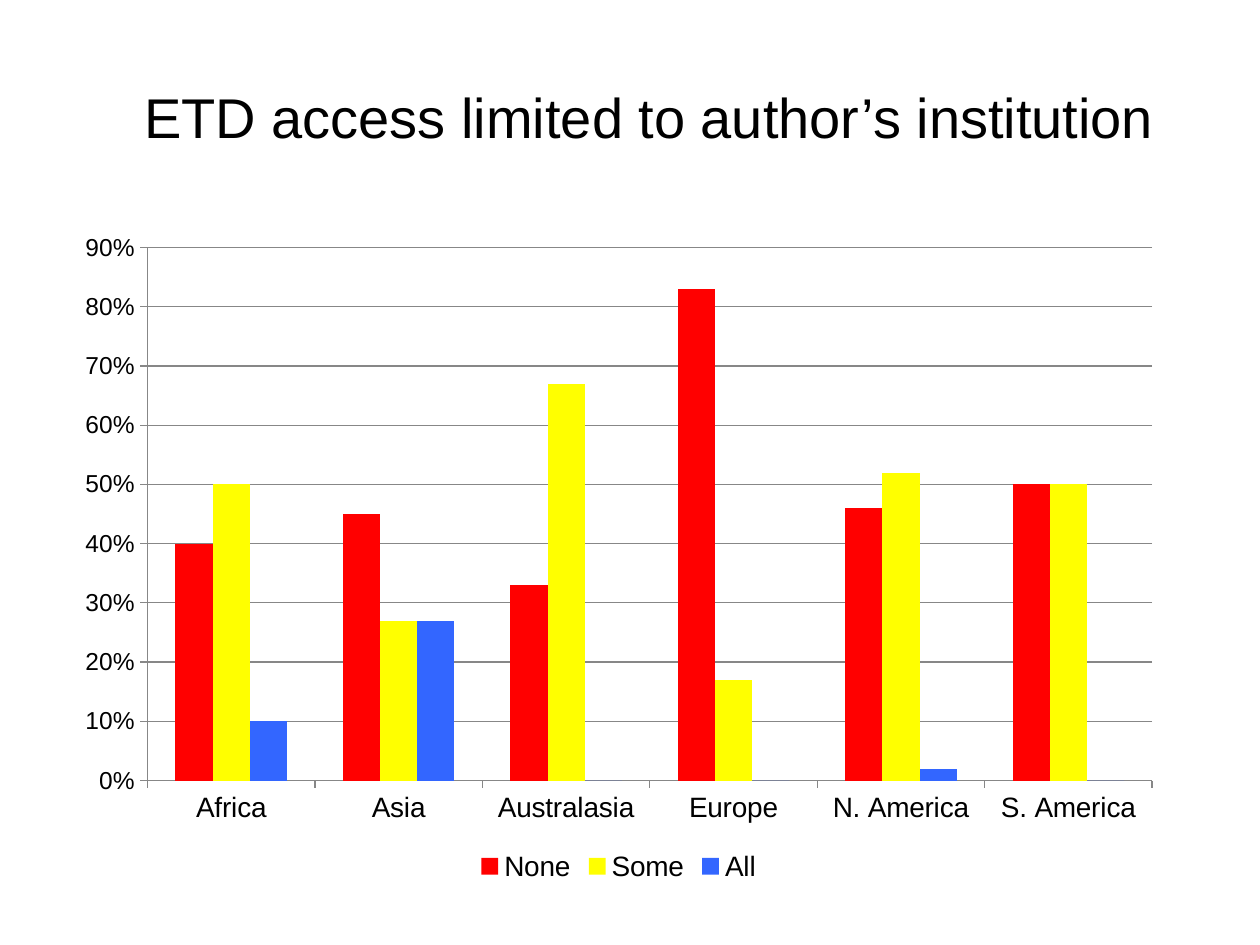
import dataclasses

import pptx
import pptx.chart.data
import pptx.dml.color
import pptx.enum.chart
import pptx.enum.text
import pptx.util
from pptx.util import Inches


@dataclasses.dataclass(frozen=True)
class Theme:
    """Hold the colours and type sizes of the slide."""
    font: str = "Arial"
    text: str = "000000"
    rule: str = "878787"
    answers: tuple = ("FF0000", "FFFF00", "3366FF")
    title_size: int = 32
    label_size: int = 16
    scale_size: int = 14


THEME = Theme()
REGIONS = ("Africa", "Asia", "Australasia", "Europe", "N. America", "S. America")
ACCESS_LIMITS = {
    "None": (0.4, 0.45, 0.33, 0.83, 0.46, 0.5),
    "Some": (0.5, 0.27, 0.67, 0.17, 0.52, 0.5),
    "All": (0.1, 0.27, 0, 0, 0.02, 0),
}


def rgb(value):
    """Turn a hex string into a colour."""
    return pptx.dml.color.RGBColor.from_string(value)


def style_font(font, size):
    """Apply the theme typeface and text colour at a size."""
    font.name = THEME.font
    font.size = pptx.util.Pt(size)
    font.bold = False
    font.color.rgb = rgb(THEME.text)


def style_line(line):
    """Draw an axis or grid line in the theme rule colour."""
    line.color.rgb = rgb(THEME.rule)
    line.width = pptx.util.Pt(0.75)


def add_title(slide, wording):
    """Add the centred slide title."""
    title = slide.shapes.add_textbox(
        Inches(0.5), Inches(0.3), Inches(9.31), Inches(1.25))
    frame = title.text_frame
    frame.word_wrap = True
    frame.vertical_anchor = pptx.enum.text.MSO_ANCHOR.MIDDLE
    paragraph = frame.paragraphs[0]
    paragraph.alignment = pptx.enum.text.PP_ALIGN.CENTER
    run = paragraph.add_run()
    run.text = wording
    style_font(run.font, THEME.title_size)


def style_axis(axis, size):
    """Give an axis outward ticks, a thin line and labels."""
    axis.major_tick_mark = pptx.enum.chart.XL_TICK_MARK.OUTSIDE
    axis.minor_tick_mark = pptx.enum.chart.XL_TICK_MARK.NONE
    style_line(axis.format.line)
    style_font(axis.tick_labels.font, size)


def add_access_chart(slide):
    """Add the clustered columns of access limits by region."""
    access = pptx.chart.data.CategoryChartData(number_format="0%")
    access.categories = REGIONS
    for answer, shares in ACCESS_LIMITS.items():
        access.add_series(answer, shares)
    chart = slide.shapes.add_chart(
        pptx.enum.chart.XL_CHART_TYPE.COLUMN_CLUSTERED,
        Inches(0.5), Inches(1.75), Inches(8.82), Inches(5.29), access).chart
    chart.has_title = False
    style_font(chart.font, THEME.label_size)

    columns = chart.plots[0]
    columns.gap_width = 150
    columns.overlap = 0
    columns.vary_by_categories = False
    for answer, colour in zip(columns.series, THEME.answers):
        answer.format.fill.solid()
        answer.format.fill.fore_color.rgb = rgb(colour)
        answer.invert_if_negative = False

    style_axis(chart.category_axis, THEME.label_size)
    scale = chart.value_axis
    style_axis(scale, THEME.scale_size)
    scale.minimum_scale, scale.maximum_scale, scale.major_unit = 0, 0.9, 0.1
    scale.tick_labels.number_format = "0%"
    scale.tick_labels.number_format_is_linked = False
    scale.has_major_gridlines = True
    style_line(scale.major_gridlines.format.line)

    chart.has_legend = True
    chart.legend.position = pptx.enum.chart.XL_LEGEND_POSITION.BOTTOM
    chart.legend.include_in_layout = False
    style_font(chart.legend.font, THEME.label_size)


def main():
    """Build and save the slide."""
    deck = pptx.Presentation()
    deck.slide_width, deck.slide_height = Inches(10), Inches(7.5)
    slide = deck.slides.add_slide(deck.slide_layouts[6])
    add_title(slide, "ETD access limited to author’s institution")
    add_access_chart(slide)
    deck.save("out.pptx")


if __name__ == "__main__":
    main()
